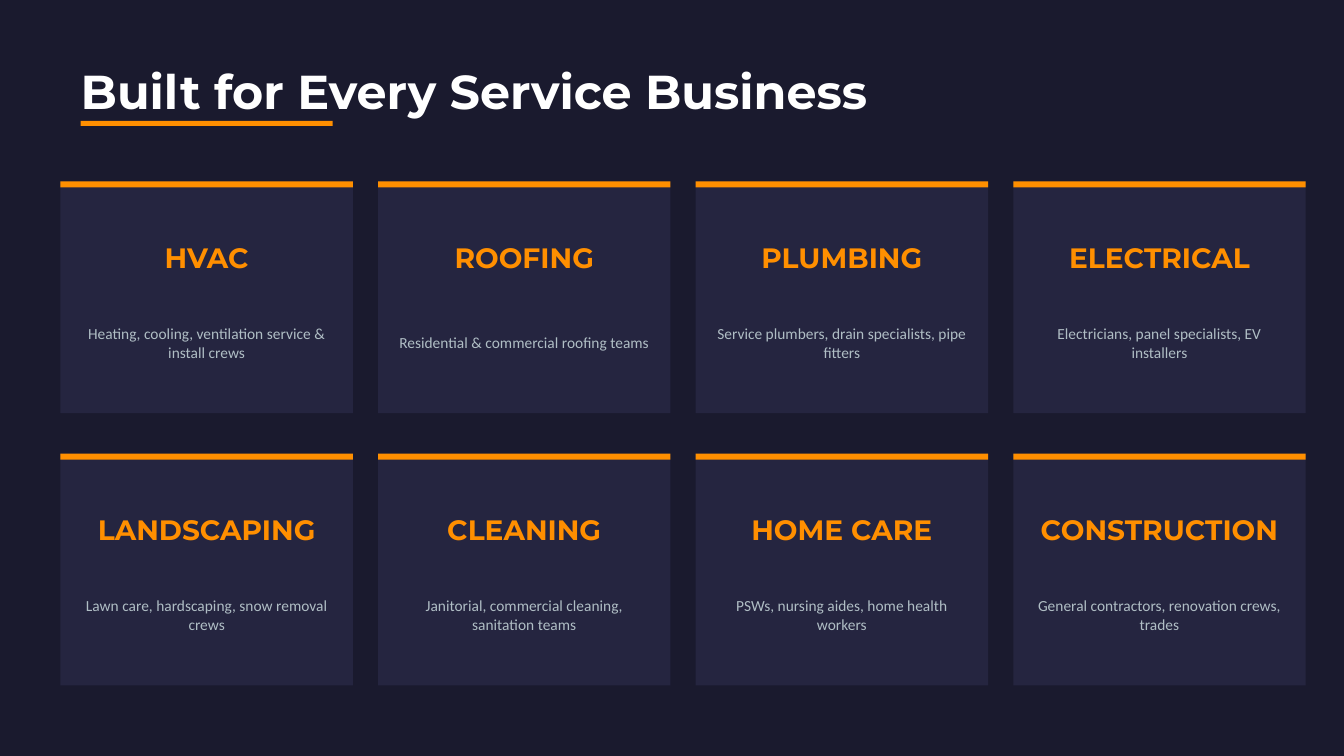
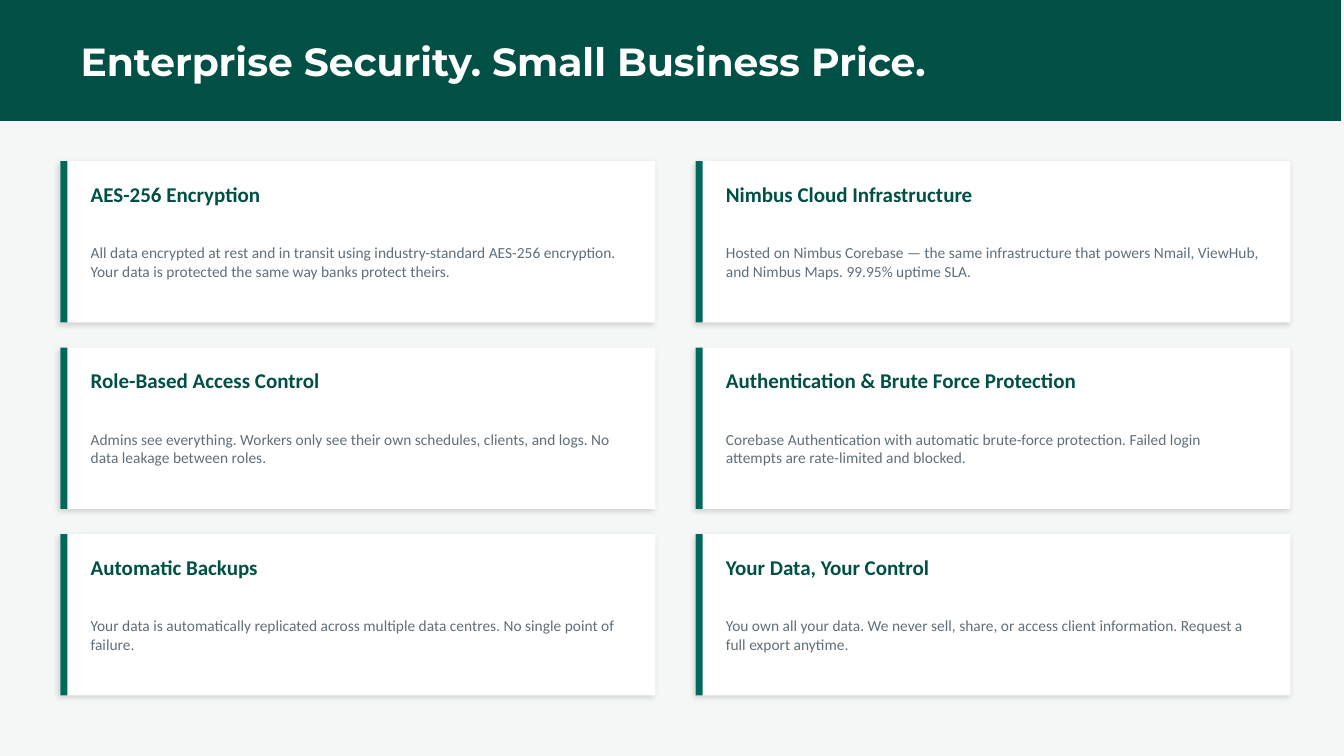
"""Builds two card-grid slides: service trades and security features."""
from lxml import etree
from pptx import Presentation
from pptx.dml.color import RGBColor
from pptx.enum.shapes import MSO_SHAPE
from pptx.enum.text import MSO_ANCHOR, MSO_AUTO_SIZE, PP_ALIGN
from pptx.oxml.ns import qn
from pptx.util import Inches, Pt

RECTANGLE = MSO_SHAPE.RECTANGLE
MIDDLE = MSO_ANCHOR.MIDDLE
NO_AUTOFIT = MSO_AUTO_SIZE.NONE
LEFT, CENTER = PP_ALIGN.LEFT, PP_ALIGN.CENTER

WHITE = RGBColor(0xFF, 0xFF, 0xFF)
BLACK = RGBColor(0x00, 0x00, 0x00)
NAVY = RGBColor(0x1A, 0x1A, 0x2E)
INDIGO = RGBColor(0x25, 0x25, 0x40)
ORANGE = RGBColor(0xFF, 0x8F, 0x00)
SILVER = RGBColor(0xB0, 0xBE, 0xC5)
MIST = RGBColor(0xF5, 0xF7, 0xF6)
FOREST = RGBColor(0x00, 0x50, 0x45)
TEAL = RGBColor(0x00, 0x69, 0x5C)
SLATE = RGBColor(0x60, 0x6E, 0x78)

HEADING_FONT, BODY_FONT = "Montserrat", "Calibri"
TITLE_ONLY = 5
MARGIN = 0.6

TRADES_TITLE = "Built for Every Service Business"
TRADES = [
    ("HVAC", "Heating, cooling, ventilation service & install crews"),
    ("ROOFING", "Residential & commercial roofing teams"),
    ("PLUMBING", "Service plumbers, drain specialists, pipe fitters"),
    ("ELECTRICAL", "Electricians, panel specialists, EV installers"),
    ("LANDSCAPING", "Lawn care, hardscaping, snow removal crews"),
    ("CLEANING", "Janitorial, commercial cleaning, sanitation teams"),
    ("HOME CARE", "PSWs, nursing aides, home health workers"),
    ("CONSTRUCTION", "General contractors, renovation crews, trades"),
]
SECURITY_TITLE = "Enterprise Security. Small Business Price."
SECURITY = [
    ("AES-256 Encryption",
     "All data encrypted at rest and in transit using industry-standard AES-256 "
     "encryption. Your data is protected the same way banks protect theirs."),
    ("Nimbus Cloud Infrastructure",
     "Hosted on Nimbus Corebase — the same infrastructure that powers Nmail, "
     "ViewHub, and Nimbus Maps. 99.95% uptime SLA."),
    ("Role-Based Access Control",
     "Admins see everything. Workers only see their own schedules, clients, and "
     "logs. No data leakage between roles."),
    ("Authentication & Brute Force Protection",
     "Corebase Authentication with automatic brute-force protection. Failed login "
     "attempts are rate-limited and blocked."),
    ("Automatic Backups",
     "Your data is automatically replicated across multiple data centres. No "
     "single point of failure."),
    ("Your Data, Your Control",
     "You own all your data. We never sell, share, or access client information. "
     "Request a full export anytime."),
]

TRADE_GRID = {
    "columns": 4, "top": 1.8, "size": (2.9, 2.3), "gap": (0.25, 0.4),
    "fill": INDIGO, "accent": ORANGE, "accent_size": (2.9, 0.06), "shadow": False,
    "heading_box": (0, 0.5, 2.9, 0.5), "body_box": (0.2, 1.2, 2.5, 0.8),
    "heading": {"name": HEADING_FONT, "size": Pt(20), "bold": True},
    "heading_color": ORANGE, "body_color": SILVER, "alignment": CENTER,
}
SECURITY_GRID = {
    "columns": 2, "top": 1.6, "size": (5.9, 1.6), "gap": (0.4, 0.25),
    "fill": WHITE, "accent": TEAL, "accent_size": (0.07, 1.6), "shadow": True,
    "heading_box": (0.3, 0.15, 5.3, 0.35), "body_box": (0.3, 0.55, 5.3, 0.9),
    "heading": {"name": BODY_FONT, "size": Pt(15), "bold": True},
    "heading_color": FOREST, "body_color": SLATE, "alignment": LEFT,
}
BODY = {"name": BODY_FONT, "size": Pt(11), "bold": False}


def set_all(target, values):
    for name, value in values.items():
        setattr(target, name, value)


def write(shape, text, font, color, alignment=LEFT):
    frame = shape.text_frame
    set_all(frame, {"word_wrap": True, "auto_size": NO_AUTOFIT, "vertical_anchor": MIDDLE,
                    "margin_left": 0, "margin_right": 0, "margin_top": 0, "margin_bottom": 0})
    paragraph = frame.paragraphs[0]
    paragraph.text = text
    paragraph.alignment = alignment
    set_all(paragraph.font, font)
    paragraph.font.color.rgb = color


def add_text(slide, box, *content):
    write(slide.shapes.add_textbox(*map(Inches, box)), *content)


def add_block(slide, box, color):
    shape = slide.shapes.add_shape(RECTANGLE, *map(Inches, box))
    shape.shadow.inherit = False
    shape.fill.solid()
    shape.fill.fore_color.rgb = color
    shape.line.fill.background()
    return shape


def add_soft_shadow(shape):
    effects = shape.element.spPr.find(qn("a:effectLst"))
    shadow = etree.SubElement(effects, qn("a:outerShdw"), blurRad=str(Pt(4)),
                              dist=str(Pt(2)), dir=str(135 * 60000),
                              algn="bl", rotWithShape="0")
    color = etree.SubElement(shadow, qn("a:srgbClr"), val=str(BLACK))
    etree.SubElement(color, qn("a:alpha"), val="15000")


def start_slide(presentation, background, title, title_box, size, band_box, band_color):
    slide = presentation.slides.add_slide(presentation.slide_layouts[TITLE_ONLY])
    slide.background.fill.solid()
    slide.background.fill.fore_color.rgb = background
    add_block(slide, band_box, band_color)
    heading = slide.shapes.title
    heading.element.getparent().append(heading.element)
    set_all(heading, dict(zip(("left", "top", "width", "height"), map(Inches, title_box))))
    write(heading, title, {"name": HEADING_FONT, "size": Pt(size), "bold": True}, WHITE)
    return slide


def add_cards(slide, cards, grid):
    width, height = grid["size"]
    for index, (heading, body) in enumerate(cards):
        row, column = divmod(index, grid["columns"])
        left = MARGIN + column * (width + grid["gap"][0])
        top = grid["top"] + row * (height + grid["gap"][1])

        def inside(box):
            return left + box[0], top + box[1], box[2], box[3]

        card = add_block(slide, (left, top, width, height), grid["fill"])
        if grid["shadow"]:
            add_soft_shadow(card)
        add_block(slide, (left, top, *grid["accent_size"]), grid["accent"])
        add_text(slide, inside(grid["heading_box"]), heading, grid["heading"],
                 grid["heading_color"], grid["alignment"])
        add_text(slide, inside(grid["body_box"]), body, BODY,
                 grid["body_color"], grid["alignment"])


def main():
    presentation = Presentation()
    presentation.slide_width = Inches(13.33)
    presentation.slide_height = Inches(7.5)
    trades = start_slide(presentation, NAVY, TRADES_TITLE, (0.8, 0.5, 10, 0.8), 34,
                         (0.8, 1.2, 2.5, 0.05), ORANGE)
    add_cards(trades, TRADES, TRADE_GRID)
    security = start_slide(presentation, MIST, SECURITY_TITLE, (0.8, 0.25, 12, 0.7), 28,
                           (0, 0, 13.3, 1.2), FOREST)
    add_cards(security, SECURITY, SECURITY_GRID)
    presentation.save("out.pptx")


if __name__ == "__main__":
    main()
